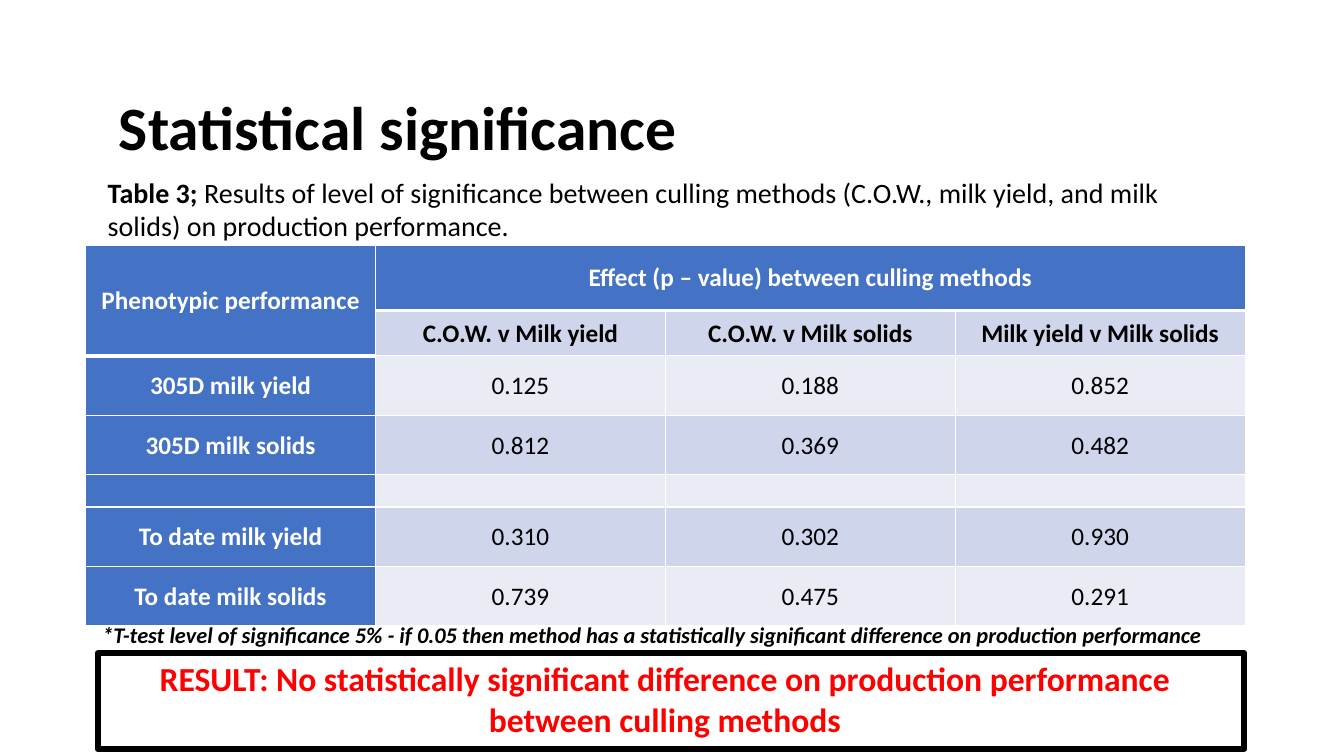
from lxml.etree import SubElement
from pptx import Presentation
from pptx.dml.color import RGBColor
from pptx.enum.shapes import MSO_SHAPE
from pptx.enum.text import MSO_ANCHOR, PP_ALIGN
from pptx.oxml.ns import qn
from pptx.util import Inches, Pt

BLACK = RGBColor(0x00, 0x00, 0x00)
WHITE = RGBColor(0xFF, 0xFF, 0xFF)
RED = RGBColor(0xFF, 0x00, 0x00)
BLUE = RGBColor(0x44, 0x72, 0xC4)
BAND_DARK = RGBColor(0xCF, 0xD5, 0xEA)
BAND_LIGHT = RGBColor(0xE9, 0xEB, 0xF5)


def add_text(p, text, size=18, color=BLACK, bold=True, italic=False, align=None):
    p.alignment = align
    r = p.add_run()
    r.text = text
    r.font.name = "Calibri"
    r.font.size = Pt(size)
    r.font.bold = bold
    r.font.italic = italic
    r.font.color.rgb = color


def set_borders(cell, bottom):
    tcPr = cell._tc.get_or_add_tcPr()
    for side, width in (("L", 1), ("R", 1), ("T", 1), ("B", bottom)):
        ln = SubElement(tcPr, qn(f"a:ln{side}"), w=str(Pt(width)))
        fill = SubElement(ln, qn("a:solidFill"))
        SubElement(fill, qn("a:srgbClr"), val=str(WHITE))


prs = Presentation()
prs.slide_width = Inches(13.33)
prs.slide_height = Inches(7.5)
s = prs.slides.add_slide(prs.slide_layouts[5])

# Significance table
rows = [
    ("Phenotypic performance", "Effect (p – value) between culling methods", "", ""),
    ("", "C.O.W. v Milk yield", "C.O.W. v Milk solids", "Milk yield v Milk solids"),
    ("305D milk yield", "0.125", "0.188", "0.852"),
    ("305D milk solids", "0.812", "0.369", "0.482"),
    ("", "", "", ""),
    ("To date milk yield", "0.310", "0.302", "0.930"),
    ("To date milk solids", "0.739", "0.475", "0.291"),
]
heights = [0.65, 0.45, 0.59, 0.59, 0.32, 0.59, 0.59]
table = s.shapes.add_table(len(rows), 4, Inches(0.85), Inches(2.43),
                           Inches(11.5), Inches(sum(heights))).table
for column in table.columns:
    column.width = Inches(2.875)
table.cell(0, 0).merge(table.cell(1, 0))
table.cell(0, 1).merge(table.cell(0, 3))

for i, (height, row) in enumerate(zip(heights, rows)):
    table.rows[i].height = Inches(height)
    for j, text in enumerate(row):
        cell = table.cell(i, j)
        header = i == 0 or j == 0
        thick = i == 0 or (i == 1 and j == 0)
        set_borders(cell, bottom=3 if thick else 1)
        cell.fill.solid()
        band = BAND_DARK if i % 2 else BAND_LIGHT
        cell.fill.fore_color.rgb = BLUE if header else band
        cell.vertical_anchor = MSO_ANCHOR.MIDDLE
        cell.margin_left = cell.margin_right = cell.margin_top = Inches(0.01)
        cell.margin_bottom = 0
        if text:
            add_text(cell.text_frame.paragraphs[0], text, bold=header or i == 1,
                     color=WHITE if header else BLACK, align=PP_ALIGN.CENTER)

# Title
title = s.shapes.title
title.left, title.top = Inches(1.08), Inches(0.57)
title.width, title.height = Inches(11.5), Inches(1.45)
title.text_frame.vertical_anchor = MSO_ANCHOR.MIDDLE
p = title.text_frame.paragraphs[0]
p.line_spacing = 0.9
add_text(p, "Statistical significance", size=44, align=PP_ALIGN.LEFT)

# Caption, result and footnote
caption, result, footnote = [
    s.shapes.add_textbox(*map(Inches, box)).text_frame
    for box in ((0.97, 1.69, 11.38, 0.77),
                (1.35, 6.48, 10.49, 0.91),
                (0.15, 6.11, 12.64, 0.37))
]
for tf in (caption, result, footnote):
    tf.word_wrap = True
add_text(caption.paragraphs[0], "Table 3;", size=20)
add_text(caption.paragraphs[0],
         " Results of level of significance between culling methods "
         "(C.O.W., milk yield, and milk solids) on production performance.",
         size=20, bold=False)
add_text(result.paragraphs[0],
         "RESULT: No statistically significant difference on production "
         "performance between culling methods",
         size=24, color=RED, align=PP_ALIGN.CENTER)
add_text(footnote.paragraphs[0],
         "*T-test level of significance 5% - if 0.05 then method has a "
         "statistically significant difference on production performance",
         size=16, italic=True, align=PP_ALIGN.CENTER)

# Frame around the result
sp = s.shapes.add_shape(MSO_SHAPE.FLOWCHART_PROCESS, Inches(0.97), Inches(6.48),
                        Inches(11.37), Inches(0.95))
sp.shadow.inherit = False
sp.fill.background()
sp.line.color.rgb = BLACK
sp.line.width = Pt(4.5)

prs.save("out.pptx")
